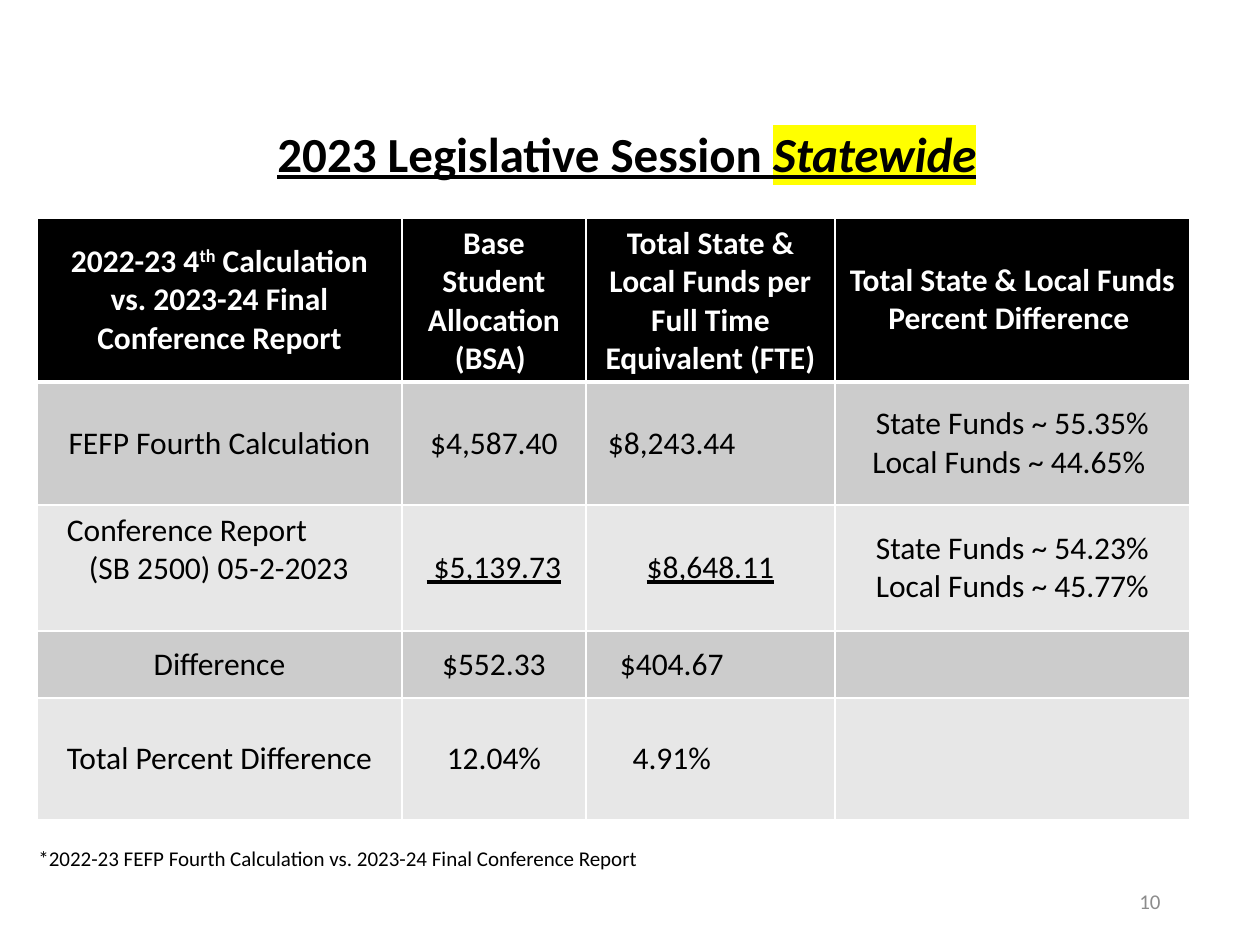
from lxml import etree
from pptx import Presentation
from pptx.dml.color import RGBColor
from pptx.enum.text import MSO_ANCHOR, PP_ALIGN
from pptx.oxml.ns import qn
from pptx.util import Emu, Pt

LEFT, MID, RIGHT = PP_ALIGN.LEFT, PP_ALIGN.CENTER, PP_ALIGN.RIGHT
TOP, CENTER = MSO_ANCHOR.TOP, MSO_ANCHOR.MIDDLE
BLACK = RGBColor(0, 0, 0)
WHITE = RGBColor(255, 255, 255)
GREY = RGBColor(0x8C, 0x8C, 0x8C)
DARK = RGBColor(0xCC, 0xCC, 0xCC)
LIGHT = RGBColor(0xE7, 0xE7, 0xE7)
YELLOW = RGBColor(255, 255, 0)
UNIT = 914400 / 126

COLS = [365, 184, 249, 355]
ROWS = [162, 123, 126, 67, 122]
LINED = {"underline": True}
HEAD = {"size": Pt(18), "bold": True}
BODY = {"size": Pt(18), "bold": False}
DATA = [
    [
        [[("2022-23 4", {}), ("th", {"raise": 30000}),
          (" Calculation vs. 2023-24 Final Conference Report", {})]],
        ["Base Student Allocation (BSA) "],
        ["Total State & Local Funds per Full Time Equivalent (FTE)"],
        ["Total State & Local Funds Percent Difference "],
    ],
    [["FEFP Fourth Calculation"], ["$4,587.40"], ["$8,243.44"],
     ["State Funds ~ 55.35%", "Local Funds ~ 44.65% "]],
    [["Conference Report", "(SB 2500) 05-2-2023"],
     [[(" $5,139.73", LINED)]], [[("$8,648.11", LINED)]],
     ["State Funds ~ 54.23%", "Local Funds ~ 45.77%"]],
    [["Difference"], ["$552.33"], ["$404.67"], []],
    [["Total Percent Difference"], ["12.04%"], ["4.91%"], []],
]
SHIFT = {"margin_right": 90}
INSETS = {
    (1, 2): SHIFT,
    (3, 2): SHIFT,
    (4, 2): SHIFT,
    (2, 0): {"margin_left": 30, "margin_bottom": 44},
}


def px(n):
    return Emu(round(n * UNIT))


def add_run(para, text, form, color):
    run = para.add_run()
    run.text = text
    font = run.font
    font.color.rgb = color
    font.name = "Calibri"
    props = run._r.get_or_add_rPr()
    for key, value in form.items():
        if key == "raise":
            props.set("baseline", str(value))
        elif key == "mark":
            mark = etree.Element(qn("a:highlight"))
            etree.SubElement(mark, qn("a:srgbClr"), val=str(value))
            props.find(qn("a:latin")).addprevious(mark)
        else:
            setattr(font, key, value)


def write(frame, lines, form, color, align):
    for i, line in enumerate(lines):
        para = frame.add_paragraph() if i else frame.paragraphs[0]
        para.alignment = align
        runs = [(line, {})] if isinstance(line, str) else line
        for text, extra in runs:
            add_run(para, text, {**form, **extra}, color)


def add_text(slide, box, lines, form, color, align, anchor=TOP):
    frame = slide.shapes.add_textbox(*map(px, box)).text_frame
    frame.word_wrap = True
    frame.vertical_anchor = anchor
    write(frame, lines, form, color, align)


def add_edges(cell, row):
    props = cell._tc.get_or_add_tcPr()
    widths = {"L": 1, "R": 1, "T": 3 if row == 1 else 1, "B": 3 if row == 0 else 1}
    for side, width in widths.items():
        edge = etree.SubElement(props, qn("a:ln" + side), w=str(Pt(width)))
        fill = etree.SubElement(edge, qn("a:solidFill"))
        etree.SubElement(fill, qn("a:srgbClr"), val=str(WHITE))


def add_grid(slide, box):
    table = slide.shapes.add_table(len(ROWS), len(COLS), *map(px, box)).table
    for col, width in zip(table.columns, COLS):
        col.width = px(width)
    for r, cells in enumerate(DATA):
        table.rows[r].height = px(ROWS[r])
        back = BLACK if r == 0 else (DARK if r % 2 else LIGHT)
        for c, lines in enumerate(cells):
            cell = table.cell(r, c)
            add_edges(cell, r)
            cell.fill.solid()
            cell.fill.fore_color.rgb = back
            cell.vertical_anchor = CENTER
            for key, value in INSETS.get((r, c), {}).items():
                setattr(cell, key, px(value))
            form, color = (BODY, BLACK) if r else (HEAD, WHITE)
            align = LEFT if (r, c) == (2, 0) else MID
            write(cell.text_frame, lines, form, color, align)
    second = table.cell(2, 0).text_frame.paragraphs[1]
    second._p.get_or_add_pPr().set("marL", str(px(22)))


def add_title(slide, box):
    runs = [("2023 Legislative Session ", {}),
            ("Statewide", {"italic": True, "mark": YELLOW})]
    form = {"size": Pt(28), "bold": True, "underline": True}
    add_text(slide, box, [runs], form, BLACK, MID)


def add_foot(slide, box):
    x, y, w, h = box
    form = {"size": Pt(12)}
    note = "*2022-23 FEFP Fourth Calculation vs. 2023-24 Final Conference Report"
    add_text(slide, (x, y, 703, 63), [note], form, BLACK, LEFT)
    add_text(slide, (x + w - 284, y + h - 50, 284, 50), ["10"], form, GREY,
             RIGHT, CENTER)


def main():
    deck = Presentation()
    deck.slide_width, deck.slide_height = px(1260), px(945)
    slide = deck.slides.add_slide(deck.slide_layouts[6])
    add_title(slide, (11, 117, 1232, 224))
    add_grid(slide, (37, 218, sum(COLS), sum(ROWS)))
    add_foot(slide, (26, 839, 1147, 87))
    deck.save("out.pptx")


if __name__ == "__main__":
    main()
